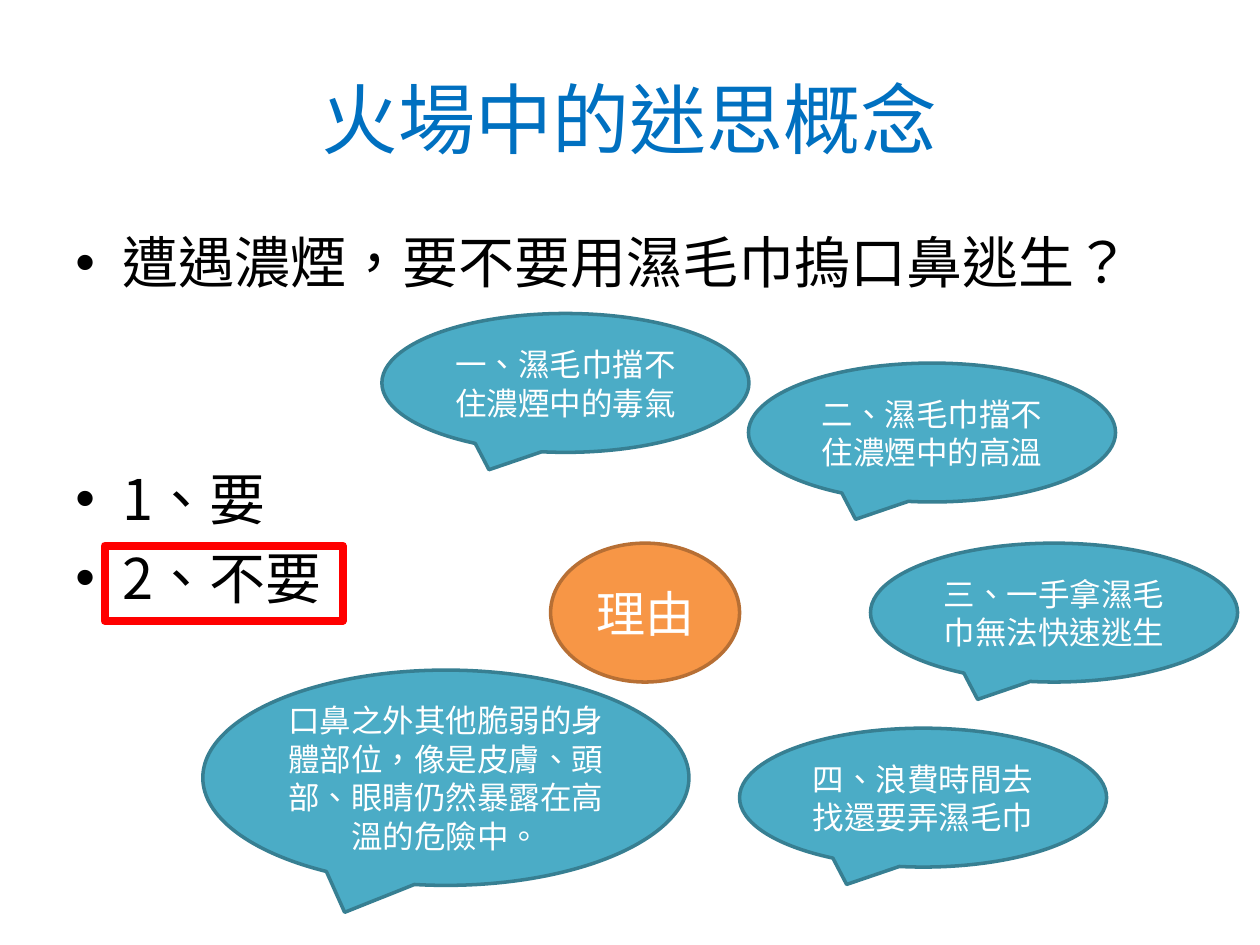
"""Builds a slide on fire-escape misconceptions with reasons in callouts."""
from lxml import etree
from pptx import Presentation
from pptx.dml.color import RGBColor
from pptx.enum.shapes import MSO_SHAPE
from pptx.enum.text import MSO_ANCHOR, PP_ALIGN
from pptx.oxml.ns import qn
from pptx.util import Cm, Pt

RECT, OVAL = MSO_SHAPE.RECTANGLE, MSO_SHAPE.OVAL
CALLOUT = MSO_SHAPE.OVAL_CALLOUT
MIDDLE, CENTER, LEFT = MSO_ANCHOR.MIDDLE, PP_ALIGN.CENTER, PP_ALIGN.LEFT
FONT = "Noto Sans CJK SC"


def rgb(value):
    return RGBColor.from_string(value)


def add_text(p, text, size=18, color="FFFFFF", align=CENTER, before=0, bullet=False):
    p.alignment = align
    p.line_spacing = Pt(round(size * 1.22))
    p.space_before = Pt(before)
    if bullet:
        pPr = p._p.get_or_add_pPr()
        pPr.set("marL", str(Cm(0.95)))
        pPr.set("indent", str(-Cm(0.95)))
        etree.SubElement(pPr, qn("a:buFont")).set("typeface", "Arial")
        etree.SubElement(pPr, qn("a:buChar")).set("char", "•")
    r = p.add_run()
    r.text = text
    r.font.size = Pt(size)
    r.font.name = FONT
    r.font.color.rgb = rgb(color)
    rPr = r._r.get_or_add_rPr()
    rPr.set("lang", "zh-TW")
    etree.SubElement(rPr, qn("a:ea")).set("typeface", FONT)


prs = Presentation()
prs.slide_width, prs.slide_height = Cm(25.4), Cm(19.05)
s = prs.slides.add_slide(prs.slide_layouts[6])

tf = s.shapes.add_textbox(Cm(1.27), Cm(0.76), Cm(22.86), Cm(3.18)).text_frame
tf.word_wrap = True
tf.vertical_anchor = MIDDLE
add_text(tf.paragraphs[0], "火場中的迷思概念", size=44, color="0070C0")

tf = s.shapes.add_textbox(Cm(1.27), Cm(4.45), Cm(22.86), Cm(12.57)).text_frame
tf.word_wrap = True
lines = [("遭遇濃煙，要不要用濕毛巾摀口鼻逃生？", 6.4), ("1、要", 96), ("2、不要", 6.4)]
for i, (text, before) in enumerate(lines):
    p = tf.add_paragraph() if i else tf.paragraphs[0]
    add_text(p, text, size=32, color="000000", align=LEFT, before=before, bullet=True)

sp = s.shapes.add_shape(RECT, Cm(2.11), Cm(11), Cm(4.8), Cm(1.52))
sp.shadow.inherit = False
sp.fill.background()
sp.line.color.rgb = rgb("FF0000")
sp.line.width = Pt(4.5)

TEAL, ORANGE = ("4BACC6", "377F92"), ("F79646", "B76F34")
bubbles = [
    (CALLOUT, 7.7, 6.32, 7.4, 2.8, TEAL, 18, "一、濕毛巾擋不住濃煙中的毒氣"),
    (CALLOUT, 15.09, 7.32, 7.4, 2.8, TEAL, 18, "二、濕毛巾擋不住濃煙中的高溫"),
    (CALLOUT, 17.55, 10.95, 7.4, 2.8, TEAL, 18, "三、一手拿濕毛巾無法快速逃生"),
    (CALLOUT, 14.91, 14.68, 7.4, 2.8, TEAL, 18, "四、浪費時間去找還要弄濕毛巾"),
    (CALLOUT, 4.09, 13.51, 9.8, 4.34, TEAL, 18,
     "口鼻之外其他脆弱的身體部位，像是皮膚、頭部、眼睛仍然暴露在高溫的危險中。"),
    (OVAL, 11.1, 10.95, 3.81, 2.8, ORANGE, 28, "理由"),
]
for kind, x, y, w, h, (fill, line), size, text in bubbles:
    sp = s.shapes.add_shape(kind, Cm(x), Cm(y), Cm(w), Cm(h))
    sp.shadow.inherit = False
    sp.fill.solid()
    sp.fill.fore_color.rgb = rgb(fill)
    sp.line.color.rgb = rgb(line)
    sp.line.width = Pt(2)
    tf = sp.text_frame
    tf.word_wrap = True
    tf.vertical_anchor = MIDDLE
    add_text(tf.paragraphs[0], text, size=size)

prs.save("out.pptx")
